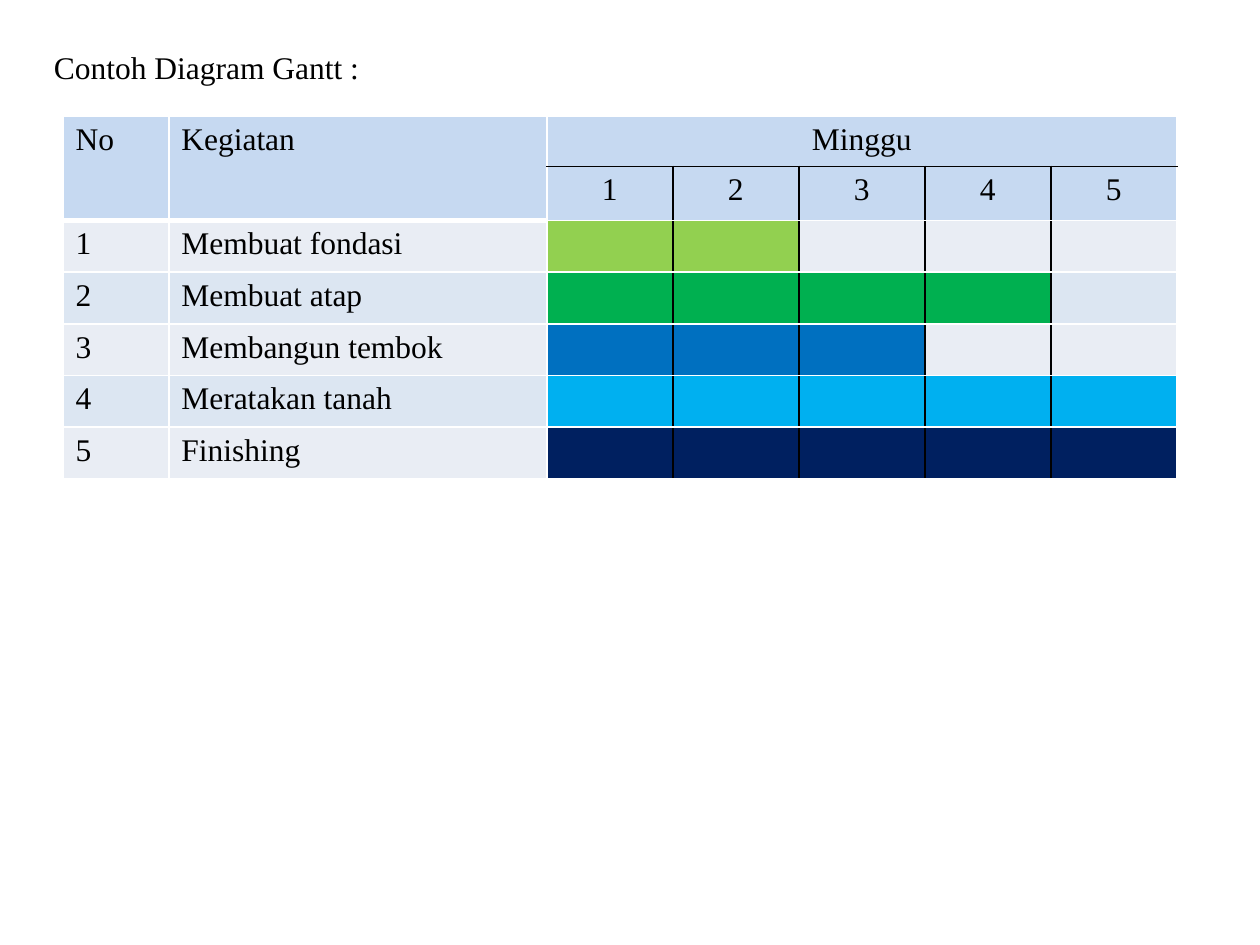
from dataclasses import dataclass

from lxml.etree import SubElement
from pptx import Presentation
from pptx.dml.color import RGBColor
from pptx.enum.text import PP_ALIGN as Align
from pptx.oxml.ns import qn
from pptx.table import Table, _Cell as Cell
from pptx.text.text import _Paragraph as Paragraph
from pptx.util import Inches, Pt

COLORS = {
    "text": "000000", "grid": "FFFFFF", "week_line": "000000",
    "header": "C6D9F1", "odd": "E9EDF4", "even": "DCE6F2",
    "lime": "92D050", "green": "00B050", "blue": "0070C0",
    "sky": "00B0F0", "navy": "002060",
}
WEEKS = 5
FIRST_WEEK = 2  # column index of week 1
HEADER_ROWS = 2
COLUMN_WIDTHS = [0.84, 3] + [1] * WEEKS
ROW_HEIGHTS = [0.2, 0.43] + [0.41] * 5


@dataclass(frozen=True)
class Activity:
    name: str
    weeks: int
    color: str


ACTIVITIES = [
    Activity("Membuat fondasi", 2, "lime"),
    Activity("Membuat atap", 4, "green"),
    Activity("Membangun tembok", 3, "blue"),
    Activity("Meratakan tanah", 5, "sky"),
    Activity("Finishing", 5, "navy"),
]


def write(paragraph: Paragraph, text: str, align: Align = Align.LEFT) -> None:
    paragraph.text = text
    paragraph.alignment = align
    paragraph.font.name = "Times New Roman"
    paragraph.font.size = Pt(18)
    paragraph.font.color.rgb = RGBColor.from_string(COLORS["text"])


def set_border(cell: Cell, side: str, color: str, width: float) -> None:
    """Draw one side of a cell; side is L, R, T or B."""
    properties = cell._tc.get_or_add_tcPr()
    line = SubElement(properties, qn(f"a:ln{side}"), w=str(Pt(width)))
    fill = SubElement(line, qn("a:solidFill"))
    SubElement(fill, qn("a:srgbClr"), val=COLORS[color])


def draw_borders(cell: Cell, row: int, column: int) -> None:
    """White grid, with black lines between weeks and under their heading."""
    in_weeks = column >= FIRST_WEEK
    below_heading = row > 0
    black = {
        "L": below_heading and column > FIRST_WEEK,
        "R": below_heading and in_weeks and column < len(COLUMN_WIDTHS) - 1,
        "T": row == 1 and in_weeks,
        "B": row == 0 and in_weeks,
    }
    for side, is_black in black.items():
        thick = side == "B" and row < HEADER_ROWS and not in_weeks
        set_border(cell, side, "week_line" if is_black else "grid", 3 if thick else 1)


def cell_color(row: int, column: int) -> str:
    if row < HEADER_ROWS:
        return "header"
    index = row - HEADER_ROWS
    activity = ACTIVITIES[index]
    if FIRST_WEEK <= column < FIRST_WEEK + activity.weeks:
        return activity.color
    return "even" if index % 2 else "odd"


def fill_table(gantt: Table) -> None:
    for column, width in enumerate(COLUMN_WIDTHS):
        gantt.columns[column].width = Inches(width)
    for row, height in enumerate(ROW_HEIGHTS):
        gantt.rows[row].height = Inches(height)
        for column in range(len(COLUMN_WIDTHS)):
            cell = gantt.cell(row, column)
            draw_borders(cell, row, column)
            cell.fill.solid()
            cell.fill.fore_color.rgb = RGBColor.from_string(COLORS[cell_color(row, column)])

    def label(row: int, column: int, text: str, align: Align = Align.LEFT) -> None:
        write(gantt.cell(row, column).text_frame.paragraphs[0], text, align)

    for column, heading in enumerate(["No", "Kegiatan"]):
        gantt.cell(0, column).merge(gantt.cell(1, column))
        label(0, column, heading)
    gantt.cell(0, FIRST_WEEK).merge(gantt.cell(0, len(COLUMN_WIDTHS) - 1))
    label(0, FIRST_WEEK, "Minggu", Align.CENTER)
    for week in range(WEEKS):
        label(1, FIRST_WEEK + week, str(week + 1), Align.CENTER)
    for index, activity in enumerate(ACTIVITIES):
        label(HEADER_ROWS + index, 0, str(index + 1))
        label(HEADER_ROWS + index, 1, activity.name)


def main() -> None:
    deck = Presentation()
    deck.slide_width, deck.slide_height = Inches(10), Inches(7.5)
    slide = deck.slides.add_slide(deck.slide_layouts[6])

    body = slide.shapes.add_textbox(
        Inches(0.33), Inches(0.33), Inches(9.33), Inches(6.83)).text_frame
    body.word_wrap = True
    write(body.paragraphs[0], "Contoh Diagram Gantt :")
    body.paragraphs[0].space_before = Pt(3.6)

    frame = slide.shapes.add_table(
        len(ROW_HEIGHTS), len(COLUMN_WIDTHS), Inches(0.5), Inches(0.92),
        Inches(sum(COLUMN_WIDTHS)), Inches(sum(ROW_HEIGHTS)))
    fill_table(frame.table)
    deck.save("out.pptx")


if __name__ == "__main__":
    main()
